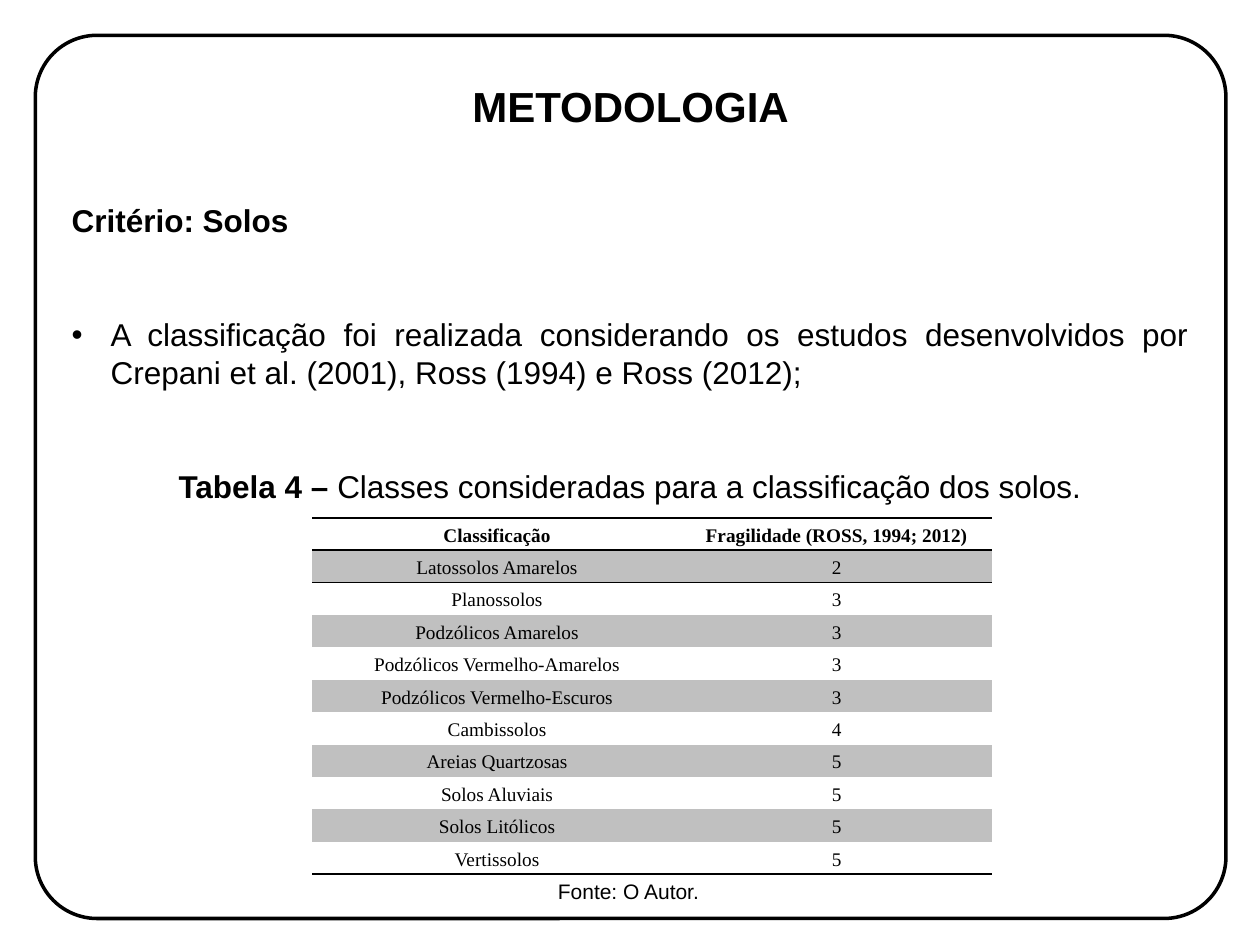
from dataclasses import dataclass

from lxml import etree
from pptx import Presentation
from pptx.dml.color import RGBColor
from pptx.enum.shapes import MSO_SHAPE
from pptx.enum.text import MSO_ANCHOR, PP_ALIGN
from pptx.oxml.ns import qn
from pptx.util import Inches, Pt

ROUND = MSO_SHAPE.ROUNDED_RECTANGLE
TOP, MIDDLE = MSO_ANCHOR.TOP, MSO_ANCHOR.MIDDLE
LEFT, CENTER, JUST = PP_ALIGN.LEFT, PP_ALIGN.CENTER, PP_ALIGN.JUSTIFY
COLORS = {"ink": "000000", "band": "C0C0C0"}
PLAIN_STYLE = "{2D5ABB26-0587-4C30-8999-92F81FD0307C}"
SERIF = "Times New Roman"
GAP = 43.5


@dataclass
class Box:
    left: float
    top: float
    width: float
    height: float

    def spot(self) -> list:
        return [Inches(v) for v in (self.left, self.top, self.width, self.height)]


@dataclass
class Soil:
    name: str
    grade: str


SOILS = [
    Soil("Latossolos Amarelos", "2"),
    Soil("Planossolos", "3"),
    Soil("Podzólicos Amarelos", "3"),
    Soil("Podzólicos Vermelho-Amarelos", "3"),
    Soil("Podzólicos Vermelho-Escuros", "3"),
    Soil("Cambissolos", "4"),
    Soil("Areias Quartzosas", "5"),
    Soil("Solos Aluviais", "5"),
    Soil("Solos Litólicos", "5"),
    Soil("Vertissolos", "5"),
]


def color(name: str) -> RGBColor:
    return RGBColor.from_string(COLORS[name])


def write(para, text: str, size: float = 18, bold: bool = False,
          font: str = "Arial", align=LEFT, before: float = 0,
          lines: float = 1) -> None:
    para.alignment = align
    para.space_before = Pt(before)
    para.line_spacing = lines
    run = para.add_run()
    run.text = text
    run.font.size = Pt(size)
    run.font.bold = bold
    run.font.name = font
    run.font.color.rgb = color("ink")


def add_bullet(para, indent: float) -> None:
    props = para._p.get_or_add_pPr()
    props.set("marL", str(Inches(indent)))
    props.set("indent", str(-Inches(indent)))
    etree.SubElement(props, qn("a:buFont"), typeface="Arial")
    etree.SubElement(props, qn("a:buChar"), char="•")


def add_text(slide, box: Box, anchor=TOP, wrap: bool = True):
    frame = slide.shapes.add_textbox(*box.spot()).text_frame
    frame.word_wrap = wrap
    frame.vertical_anchor = anchor
    return frame


def add_frame(slide, box: Box) -> None:
    shape = slide.shapes.add_shape(ROUND, *box.spot())
    shape.adjustments[0] = 0.07
    shape.shadow.inherit = False
    shape.fill.background()
    shape.line.color.rgb = color("ink")
    shape.line.width = Pt(2)


def add_edge(cell, side: str) -> None:
    props = cell._tc.get_or_add_tcPr()
    line = etree.SubElement(props, qn(f"a:ln{side}"), w=str(Pt(1)))
    fill = etree.SubElement(line, qn("a:solidFill"))
    etree.SubElement(fill, qn("a:srgbClr"), val=COLORS["ink"])


def fill_cell(cell, text: str, row: int, last: int) -> None:
    cell.margin_left = cell.margin_right = Inches(0.07)
    cell.margin_top = cell.margin_bottom = 0
    cell.vertical_anchor = MIDDLE
    write(cell.text_frame.paragraphs[0], text, size=11, bold=row == 0,
          font=SERIF, align=CENTER, lines=1.15)
    if row <= 1:
        add_edge(cell, "T")
    if row in (0, last):
        add_edge(cell, "B")
    if row % 2:
        cell.fill.solid()
        cell.fill.fore_color.rgb = color("band")
    else:
        cell.fill.background()


def add_grid(slide, box: Box, widths: list[float], rows: list[Soil]) -> None:
    table = slide.shapes.add_table(len(rows), len(widths), *box.spot()).table
    table.first_row = table.horz_banding = False
    table._tbl.tblPr.find(qn("a:tableStyleId")).text = PLAIN_STYLE
    for col, width in zip(table.columns, widths):
        col.width = Inches(width)
    for num, soil in enumerate(rows):
        table.rows[num].height = Inches(box.height / len(rows))
        for col, text in enumerate((soil.name, soil.grade)):
            fill_cell(table.cell(num, col), text, num, len(rows) - 1)


def main() -> None:
    deck = Presentation()
    deck.slide_width, deck.slide_height = Inches(10), Inches(7.5)
    slide = deck.slides.add_slide(deck.slide_layouts[6])

    add_frame(slide, Box(0.28, 0.28, 9.45, 7.01))
    title = add_text(slide, Box(0.28, 0.29, 9.45, 1.1), anchor=MIDDLE)
    write(title.paragraphs[0], "METODOLOGIA", size=24, bold=True, align=CENTER)

    body = add_text(slide, Box(0.47, 1.55, 9.06, 3.13))
    write(body.paragraphs[0], "Critério: Solos", bold=True, align=JUST)
    point = body.add_paragraph()
    write(point, "A classificação foi realizada considerando os estudos "
          "desenvolvidos por Crepani et al. (2001), Ross (1994) e Ross (2012);",
          align=JUST, before=GAP)
    add_bullet(point, 0.31)
    label = body.add_paragraph()
    write(label, "Tabela 4 – ", bold=True, align=CENTER, before=GAP)
    write(label, "Classes consideradas para a classificação dos solos.",
          align=CENTER, before=GAP)

    head = Soil("Classificação", "Fragilidade (ROSS, 1994; 2012)")
    add_grid(slide, Box(2.48, 4.11, 5.39, 2.83), [2.93, 2.46], [head, *SOILS])

    source = add_text(slide, Box(4.33, 6.92, 1.34, 0.3), wrap=False)
    write(source.paragraphs[0], "Fonte: O Autor.", size=12)
    deck.save("out.pptx")


if __name__ == "__main__":
    main()
